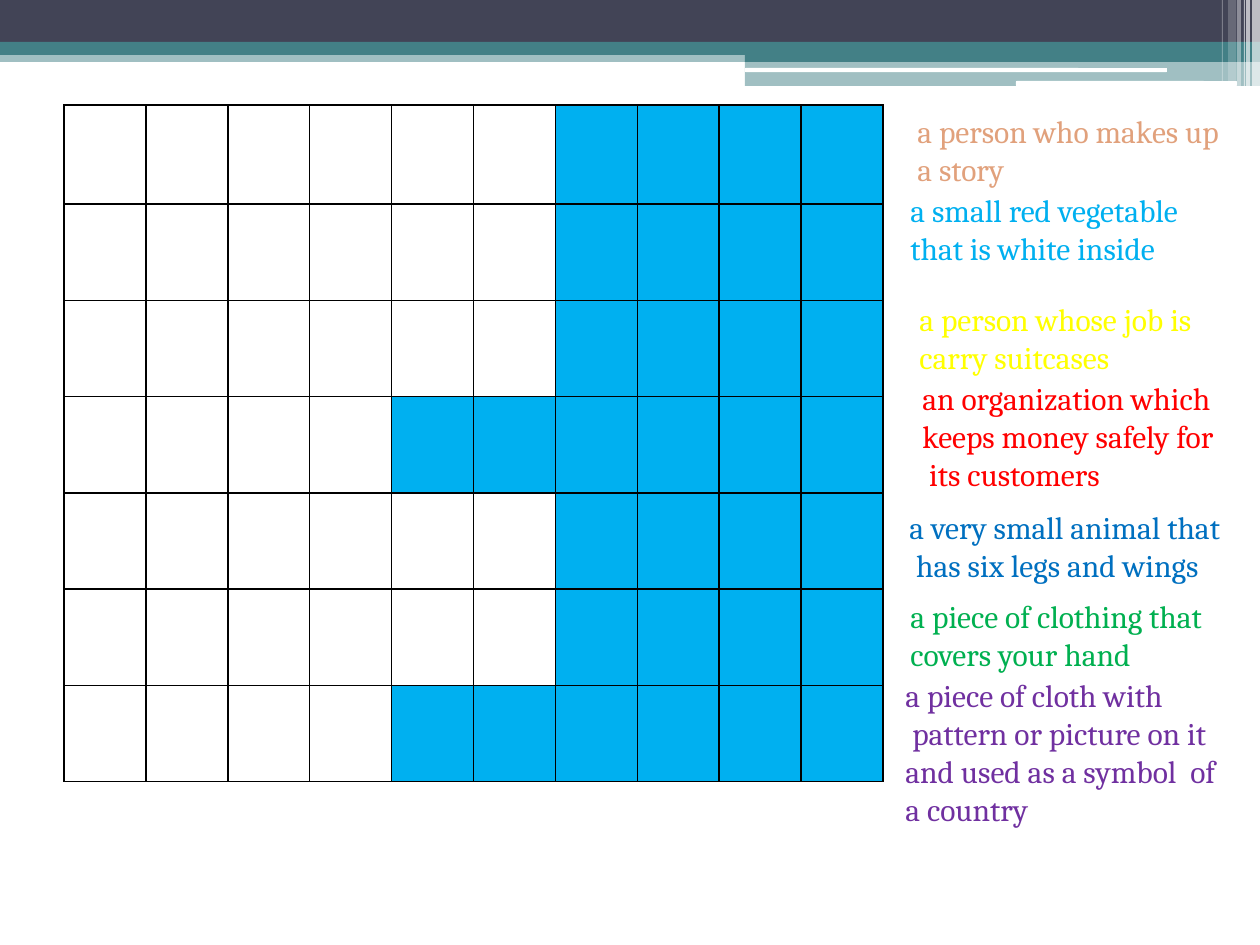
from lxml.etree import SubElement
from pptx import Presentation
from pptx.dml.color import RGBColor
from pptx.enum.shapes import MSO_SHAPE
from pptx.oxml import parse_xml
from pptx.oxml.ns import nsdecls, qn
from pptx.util import Pt

SCALE = 914400 / 126
COLORS = {
    "slate": "424456", "teal": "438086", "white": "FFFFFF", "black": "000000",
    "sky": "00B0F0", "peach": "E1A17C", "yellow": "FFFF00", "red": "FF0000",
    "blue": "0070C0", "green": "00B050", "purple": "7030A0",
}
# left, top, width, height, colour, opacity in percent
BARS = [
    (0, 50, 1260, 12, "teal", 50),
    (0, 0, 1260, 42, "slate", 100),
    (0, 42, 1260, 13, "teal", 100),
    (745, 49, 515, 13, "teal", 100),
    (745, 61, 515, 25, "teal", 50),
]
RULES = [(745, 68, 422, 4), (1016, 81, 221, 5)]
# left, width, height, opacity in percent
STRIPES = [
    (1252, 8, 86, 65), (1246, 4, 86, 65), (1244, 1, 86, 60),
    (1237, 4, 86, 40), (1228, 8, 81, 20), (1222, 1, 81, 30),
]
COLS = 10
WORDS = [6, 6, 6, 4, 6, 6, 4]  # open cells in each row
CLUES = [
    (905, 106, 355, "peach", ["a person who makes up", "a story"]),
    (898, 185, 328, "sky", ["a small red vegetable", "that is white inside"]),
    (907, 294, 325, "yellow", ["a person whose job is", "carry suitcases"]),
    (910, 373, 350, "red", ["an organization which", "keeps money safely for",
                            " its customers"]),
    (897, 502, 363, "blue", ["a very small animal that",
                             " has six legs and wings"]),
    (898, 591, 344, "green", ["a piece of clothing that", "covers your hand"]),
    (893, 670, 367, "purple", ["a piece of cloth with",
                               " pattern or picture on it",
                               "and used as a symbol  of", "a country"]),
]


def px(n):
    return round(n * SCALE)


def rgb(name):
    return RGBColor.from_string(COLORS[name])


def add_bar(slide, left, top, width, height, color, alpha=100,
            kind=MSO_SHAPE.RECTANGLE):
    bar = slide.shapes.add_shape(kind, px(left), px(top), px(width), px(height))
    bar.shadow.inherit = False
    bar.line.fill.background()
    bar.fill.solid()
    bar.fill.fore_color.rgb = rgb(color)
    if alpha < 100:
        tint = bar.fill._xPr.find(qn("a:solidFill"))[0]
        SubElement(tint, qn("a:alpha"), val=str(alpha * 1000))


def add_text(slide, lines, left, top, width, color="black", size=18,
             font="Cambria"):
    height = 13 + 38 * len(lines)
    box = slide.shapes.add_textbox(px(left), px(top), px(width), px(height))
    frame = box.text_frame
    frame.word_wrap = True
    frame.text = "\n".join(lines)
    for para in frame.paragraphs:
        for run in para.runs:
            run.font.size = Pt(size)
            run.font.name = font
            run.font.color.rgb = rgb(color)


def add_edges(cell):
    """Draw a thin black line on all four sides of a cell."""
    props = cell._tc.get_or_add_tcPr()
    for i, side in enumerate("LRTB"):
        props.insert(i, parse_xml(
            f'<a:ln{side} {nsdecls("a")} w="12700"><a:solidFill>'
            f'<a:srgbClr val="{COLORS["black"]}"/></a:solidFill></a:ln{side}>'))


def add_grid(slide, left, top, width, height, first):
    """Add the word grid; its first row is slightly taller than the rest."""
    table = slide.shapes.add_table(len(WORDS), COLS, px(left), px(top),
                                   px(width), px(height)).table
    table.first_row = table.horz_banding = False
    for col in table.columns:
        col.width = px(width / COLS)
    rest = (height - first) / (len(WORDS) - 1)
    for r, size in enumerate(WORDS):
        table.rows[r].height = px(rest if r else first)
        for c in range(COLS):
            cell = table.cell(r, c)
            if c < size:
                cell.fill.background()
            else:
                cell.fill.solid()
                cell.fill.fore_color.rgb = rgb("sky")
            add_edges(cell)


def main():
    deck = Presentation()
    deck.slide_width, deck.slide_height = px(1260), px(945)
    slide = deck.slides.add_slide(deck.slide_layouts[6])
    for bar in BARS:
        add_bar(slide, *bar)
    for rule in RULES:
        add_bar(slide, *rule, "white", kind=MSO_SHAPE.ROUNDED_RECTANGLE)
    for left, width, height, alpha in STRIPES:
        add_bar(slide, left, 0, width, height, "white", alpha)
    add_grid(slide, 64, 105, 819, 677, first=99)
    for left, top, width, color, lines in CLUES:
        add_text(slide, lines, left, top, width, color=color)
    deck.save("out.pptx")


if __name__ == "__main__":
    main()
